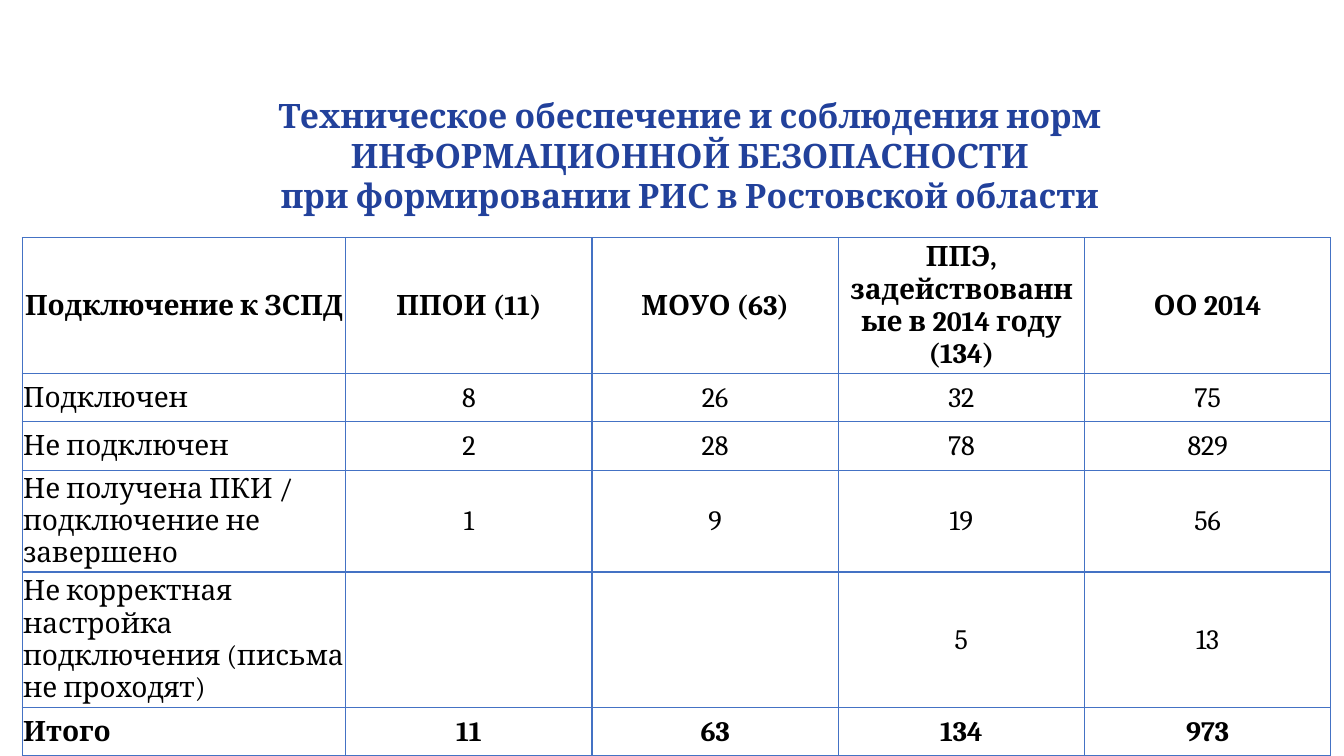
from lxml import etree
from pptx import Presentation
from pptx.dml.color import RGBColor
from pptx.enum import text
from pptx.oxml import ns
from pptx.util import Inches, Pt

COLORS = {"title": "22419B", "text": "000000", "border": "4472C4"}
FONT = "Cambria"

TITLE = [
    "Техническое обеспечение и соблюдения норм ",
    "ИНФОРМАЦИОННОЙ БЕЗОПАСНОСТИ ",
    "при формировании РИС в Ростовской области ",
]
ROWS = [
    ["Подключение к ЗСПД", "ППОИ (11)", "МОУО (63)",
     "ППЭ, задействованные в 2014 году (134)", "ОО 2014"],
    ["Подключен", "8", "26", "32", "75"],
    ["Не подключен", "2", "28", "78", "829"],
    ["Не получена ПКИ / подключение не завершено", "1", "9", "19", "56"],
    ["Не корректная настройка подключения (письма не проходят)",
     "", "", "5", "13"],
    ["Итого", "11", "63", "134", "973"],
]
ROW_UNITS = [2, 1, 1, 2, 2, 1]
LABEL_WIDTH = 3.21


def add_run(p, content, size, color, bold):
    r = p.add_run()
    r.text = content
    r.font.name = FONT
    r.font.size = Pt(size)
    r.font.bold = bold
    r.font.color.rgb = RGBColor.from_string(COLORS[color])


def set_borders(cell):
    tc_pr = cell._tc.get_or_add_tcPr()
    for side in ("a:lnL", "a:lnR", "a:lnT", "a:lnB"):
        ln = etree.SubElement(tc_pr, ns.qn(side), w=str(Pt(1)))
        fill = etree.SubElement(ln, ns.qn("a:solidFill"))
        etree.SubElement(fill, ns.qn("a:srgbClr"), val=COLORS["border"])


def add_title(s, left, top, width, height):
    sp = s.shapes.add_textbox(Inches(left), Inches(top),
                              Inches(width), Inches(height))
    tf = sp.text_frame
    tf.word_wrap = True
    tf.auto_size = text.MSO_AUTO_SIZE.SHAPE_TO_FIT_TEXT
    for i, line in enumerate(TITLE):
        p = tf.add_paragraph() if i else tf.paragraphs[0]
        p.alignment = text.PP_ALIGN.CENTER
        add_run(p, line, 24, "title", True)


def fill_cell(cell, content, bold, centred):
    set_borders(cell)
    cell.fill.background()
    cell.vertical_anchor = text.MSO_ANCHOR.MIDDLE
    cell.margin_left = cell.margin_right = cell.margin_top = Inches(0.01)
    cell.margin_bottom = 0
    p = cell.text_frame.paragraphs[0]
    p.alignment = text.PP_ALIGN.CENTER if centred else text.PP_ALIGN.LEFT
    if content:
        add_run(p, content, 20, "text", bold)


def add_connection_table(s, left, top, width, height):
    n_rows, n_cols = len(ROWS), len(ROWS[0])
    table = s.shapes.add_table(n_rows, n_cols, Inches(left), Inches(top),
                               Inches(width), Inches(height)).table
    table.first_row = table.horz_banding = False

    # The label column is wider; the value columns share the rest
    value_width = (width - LABEL_WIDTH) / (n_cols - 1)
    for i, column in enumerate(table.columns):
        column.width = Inches(value_width if i else LABEL_WIDTH)
    for row, units in zip(table.rows, ROW_UNITS):
        row.height = Inches(height * units / sum(ROW_UNITS))

    # Header and total rows are bold; only body labels align left
    for i, values in enumerate(ROWS):
        bold = i in (0, n_rows - 1)
        for j, content in enumerate(values):
            fill_cell(table.cell(i, j), content, bold, i == 0 or j > 0)


def main():
    prs = Presentation()
    prs.slide_width, prs.slide_height = Inches(13.33), Inches(7.5)
    s = prs.slides.add_slide(prs.slide_layouts[6])
    add_title(s, 0.53, 0.89, 12.7, 1.31)
    add_connection_table(s, 0.22, 2.36, 12.98, 4.32)
    prs.save("out.pptx")


if __name__ == "__main__":
    main()
